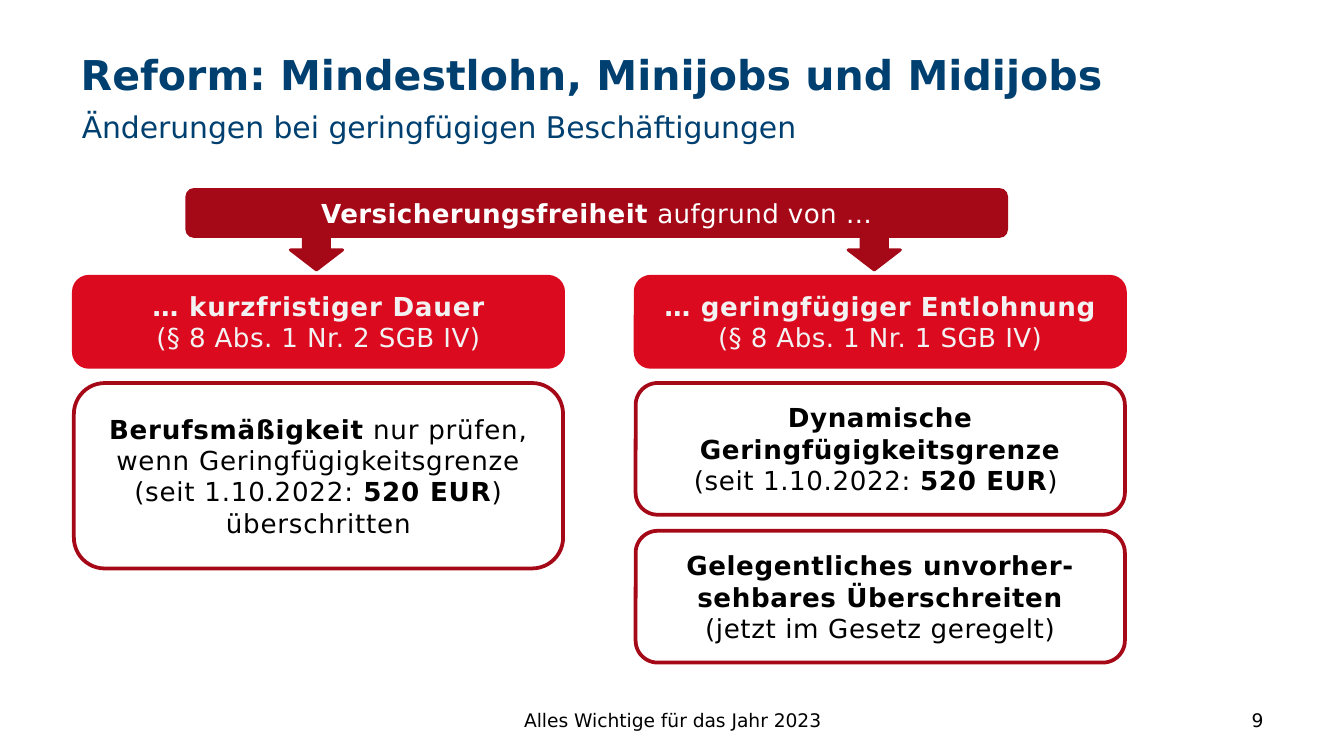
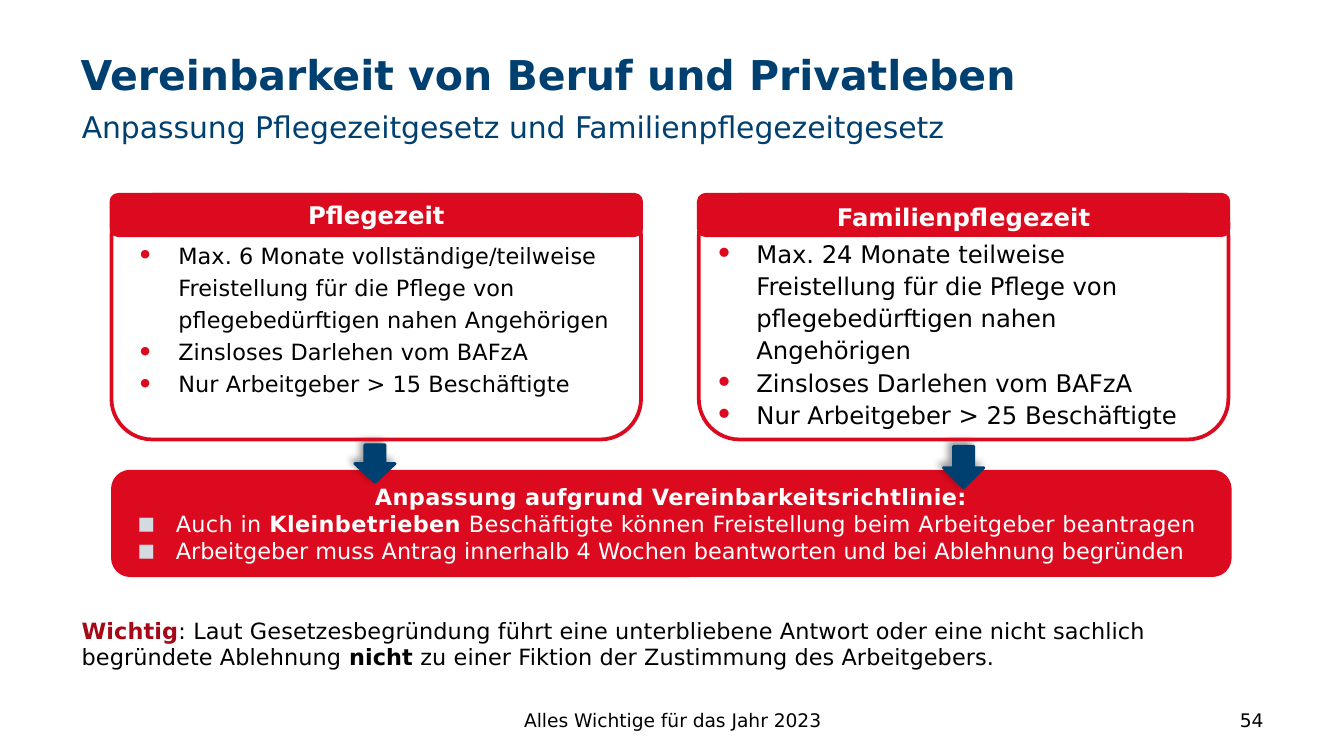
import pptx
import pptx.util
import pptx.dml.color
import pptx.enum.shapes
import pptx.enum.text
import pptx.oxml
import pptx.oxml.ns
from dataclasses import dataclass
from lxml import etree

Inches = pptx.util.Inches
Pt = pptx.util.Pt
Shape = pptx.enum.shapes.MSO_SHAPE
Align = pptx.enum.text.PP_ALIGN
Anchor = pptx.enum.text.MSO_ANCHOR
qn = pptx.oxml.ns.qn


@dataclass(frozen=True)
class Theme:
    font: str = "DejaVu Sans"
    navy: str = "004070"
    red: str = "DC0A1E"
    dark_red: str = "A50816"
    white: str = "FFFFFF"
    pale: str = "F2F2F2"
    silver: str = "D4DADF"
    black: str = "000000"
    title: float = 22
    subtitle: float = 16
    label: float = 14
    heading: float = 13
    body: float = 12
    footer: float = 10
    leading: float = 17.2
    tracking: float = 0.07


THEME = Theme()
FOOTER = "Alles Wichtige für das Jahr 2023"


def rgb(color):
    return pptx.dml.color.RGBColor.from_string(color)


def add_bullet(para, char, color, size, indent, hanging):
    properties = para._p.get_or_add_pPr()
    properties.set("marL", str(Inches(indent)))
    properties.set("indent", str(-Inches(hanging)))
    bullet_color = etree.SubElement(properties, qn("a:buClr"))
    etree.SubElement(bullet_color, qn("a:srgbClr"), val=color)
    etree.SubElement(properties, qn("a:buSzPct"), val=str(size * 1000))
    etree.SubElement(properties, qn("a:buFont"), typeface=THEME.font)
    etree.SubElement(properties, qn("a:buChar"), char=char)


def write(para, text, size=THEME.body, color=THEME.black, spacing=0,
          align=Align.LEFT, bullet=None, leading=None):
    """Text between asterisks is bold; a newline is a soft break."""
    if bullet:
        add_bullet(para, **bullet)
    para.alignment = align
    if leading:
        para.line_spacing = Pt(leading)
    for part, chunk in enumerate(text.split("*")):
        for row, words in enumerate(chunk.split("\n")):
            if row:
                para.add_line_break()
            if not words:
                continue
            span = para.add_run()
            span.text = words
            span.font.name = THEME.font
            span.font.size = Pt(size)
            span.font.bold = part % 2 == 1
            span.font.color.rgb = rgb(color)
            if spacing:
                span._r.get_or_add_rPr().set("spc", str(round(spacing * 100)))


def write_all(frame, lines, **style):
    for index, line in enumerate(lines):
        text, changes = (line, {}) if isinstance(line, str) else line
        para = frame.add_paragraph() if index else frame.paragraphs[0]
        write(para, text, **{**style, **changes})


def set_frame(frame, insets=(0.1, 0.05, 0.1, 0.05), anchor=Anchor.MIDDLE):
    frame.word_wrap = True
    frame.auto_size = pptx.enum.text.MSO_AUTO_SIZE.NONE
    frame.vertical_anchor = anchor
    (frame.margin_left, frame.margin_top,
     frame.margin_right, frame.margin_bottom) = map(Inches, insets)


class Builder:
    def __init__(self):
        self.deck = pptx.Presentation()
        self.deck.slide_width = Inches(10)
        self.deck.slide_height = Inches(10) * 9 // 16
        self.page = None

    def new_page(self, title, subtitle, number, spacing=0):
        self.page = self.deck.slides.add_slide(self.deck.slide_layouts[5])
        heading = self.page.shapes.title
        heading.left, heading.top = Inches(0.5), Inches(0.32)
        heading.width, heading.height = Inches(8.11), Inches(0.44)
        set_frame(heading.text_frame, anchor=Anchor.TOP)
        write_all(heading.text_frame, [f"*{title}*"], size=THEME.title,
                  color=THEME.navy, spacing=spacing)
        self.text((0.51, 0.76, 8.11, 0.28), [subtitle], anchor=Anchor.TOP,
                  size=THEME.subtitle, color=THEME.navy)
        self.text((3.42, 5.21, 3.17, 0.3), [FOOTER],
                  size=THEME.footer, align=Align.CENTER)
        self.text((7.17, 5.21, 2.33, 0.3), [number],
                  size=THEME.footer, align=Align.RIGHT)

    def text(self, place, lines, anchor=Anchor.MIDDLE, **style):
        box = self.page.shapes.add_textbox(*map(Inches, place))
        set_frame(box.text_frame, anchor=anchor)
        write_all(box.text_frame, lines, **style)
        return box

    def shape(self, kind, place, fill=None, line=None, weight=2):
        box = self.page.shapes.add_shape(kind, *map(Inches, place))
        box.shadow.inherit = False
        if fill:
            box.fill.solid()
            box.fill.fore_color.rgb = rgb(fill)
        else:
            box.fill.background()
        if line:
            box.line.color.rgb = rgb(line)
            box.line.width = Pt(weight)
        else:
            box.line.fill.background()
        return box

    def card(self, place, lines, fill=None, line=None, insets=(0, 0, 0, 0),
             kind=Shape.ROUNDED_RECTANGLE, anchor=Anchor.MIDDLE, **style):
        box = self.shape(kind, place, fill, line)
        set_frame(box.text_frame, insets, anchor)
        write_all(box.text_frame, lines, **{"align": Align.CENTER, **style})

    def arrow(self, place, color, shadow=False):
        arrow = self.shape(Shape.DOWN_ARROW, place, color, color, 1.5)
        if shadow:
            effects = arrow._element.spPr.find(qn("a:effectLst"))
            outer = etree.SubElement(
                effects, qn("a:outerShdw"), blurRad=str(Pt(4)),
                dist=str(Pt(3)), dir=str(225 * 60000), rotWithShape="0")
            tone = etree.SubElement(outer, qn("a:srgbClr"), val=THEME.black)
            etree.SubElement(tone, qn("a:alpha"), val="40000")


def build_minijobs(builder):
    builder.new_page("Reform: Mindestlohn, Minijobs und Midijobs",
                     "Änderungen bei geringfügigen Beschäftigungen", "9",
                     THEME.tracking)
    left, right, width = 0.55, 4.73, 3.64
    grounds = [
        (left, 2.16, "*… kurzfristiger Dauer*", "(§ 8 Abs. 1 Nr. 2 SGB IV)", 0.4),
        (right, 6.31, "*… geringfügiger Entlohnung*", "(§ 8 Abs. 1 Nr. 1 SGB IV)", 0.3),
    ]
    for x, arrow_x, ground, law, spacing in grounds:
        builder.card((x, 2.06, width, 0.67), [ground, (law, {"spacing": 0.2})],
                     THEME.red, THEME.red, size=THEME.label,
                     color=THEME.pale, spacing=spacing)
        builder.arrow((arrow_x, 1.71, 0.39, 0.3), THEME.dark_red)
    rules = [
        (left, 2.85, 1.38, 0.4,
         "*Berufsmäßigkeit* nur prüfen, wenn Geringfügigkeitsgrenze\n"
         "(seit 1.10.2022: *520 EUR*) überschritten"),
        (right, 2.85, 0.98, 0.3,
         "*Dynamische Geringfügigkeitsgrenze*\n(seit 1.10.2022: *520 EUR*) "),
        (right, 3.95, 0.98, 0.3,
         "*Gelegentliches unvorher-\nsehbares Überschreiten*\n"
         "(jetzt im Gesetz geregelt)"),
    ]
    for x, y, height, spacing, rule in rules:
        builder.card((x, y, width, height), [rule], THEME.white,
                     THEME.dark_red, size=THEME.label, spacing=spacing)
    builder.card((1.38, 1.4, 6.12, 0.37),
                 ["*Versicherungsfreiheit* aufgrund von …"], THEME.dark_red,
                 size=THEME.label, color=THEME.white, spacing=0.2)


def build_care_leave(builder):
    builder.new_page("Vereinbarkeit von Beruf und Privatleben",
                     "Anpassung Pflegezeitgesetz und Familienpflegezeitgesetz", "54")
    note = builder.text((0.51, 4.54, 8.86, 0.5), ["*Wichtig*"], Anchor.TOP,
                        color=THEME.dark_red, spacing=THEME.tracking)
    write(note.text_frame.paragraphs[0],
          ": Laut Gesetzesbegründung führt eine unterbliebene Antwort oder eine "
          "nicht sachlich begründete Ablehnung *nicht* zu einer Fiktion der "
          "Zustimmung des Arbeitgebers.", spacing=THEME.tracking)

    square = dict(char="▪", color=THEME.silver, size=125, indent=0.39, hanging=0.29)
    item = {"bullet": square, "align": Align.LEFT}
    builder.card(
        (0.84, 3.51, 8.31, 0.77),
        ["*Anpassung aufgrund Vereinbarkeitsrichtlinie:*",
         ("Auch in *Kleinbetrieben* Beschäftigte können Freistellung beim "
          "Arbeitgeber beantragen", item),
         ("Arbeitgeber muss Antrag innerhalb 4 Wochen beantworten und bei "
          "Ablehnung begründen", {**item, "spacing": 0})],
        THEME.red, THEME.red, insets=(0.04,) * 4, color=THEME.white, spacing=0.2)
    builder.arrow((2.64, 3.31, 0.3, 0.28), THEME.navy, shadow=True)
    builder.arrow((7.02, 3.32, 0.3, 0.31), THEME.navy, shadow=True)

    dot = dict(char="•", color=THEME.red, size=130, indent=0.31, hanging=0.31)
    leaves = [
        (0.83, "Pflegezeit", "6 Monate vollständige/teilweise", 15,
         Shape.FLOWCHART_ALTERNATE_PROCESS, Anchor.MIDDLE,
         (0.1, 0.05, 0.1, 0.05), THEME.body, THEME.tracking, 0, None),
        (5.2, "Familienpflegezeit", "24 Monate teilweise", 25,
         Shape.ROUNDED_RECTANGLE, Anchor.TOP,
         (0.03, 0.22, 0.2, 0), THEME.heading, 0, THEME.tracking, THEME.leading),
    ]
    for (x, name, duration, staff, kind, anchor, insets, size, spacing,
         name_spacing, name_leading) in leaves:
        builder.card(
            (x, 1.45, 3.94, 1.82),
            [f"Max. {duration} Freistellung für die Pflege von "
             "pflegebedürftigen nahen Angehörigen",
             "Zinsloses Darlehen vom BAFzA",
             f"Nur Arbeitgeber > {staff} Beschäftigte"],
            line=THEME.red, kind=kind, anchor=anchor, insets=insets, size=size,
            spacing=spacing, align=Align.LEFT, bullet=dot, leading=THEME.leading)
        builder.card((x, 1.45, 3.94, 0.3), [f"*{name}*"], THEME.red, THEME.red,
                     kind=kind, size=THEME.heading, color=THEME.white,
                     spacing=name_spacing, leading=name_leading)


def main():
    builder = Builder()
    build_minijobs(builder)
    build_care_leave(builder)
    builder.deck.save("out.pptx")


if __name__ == "__main__":
    main()
